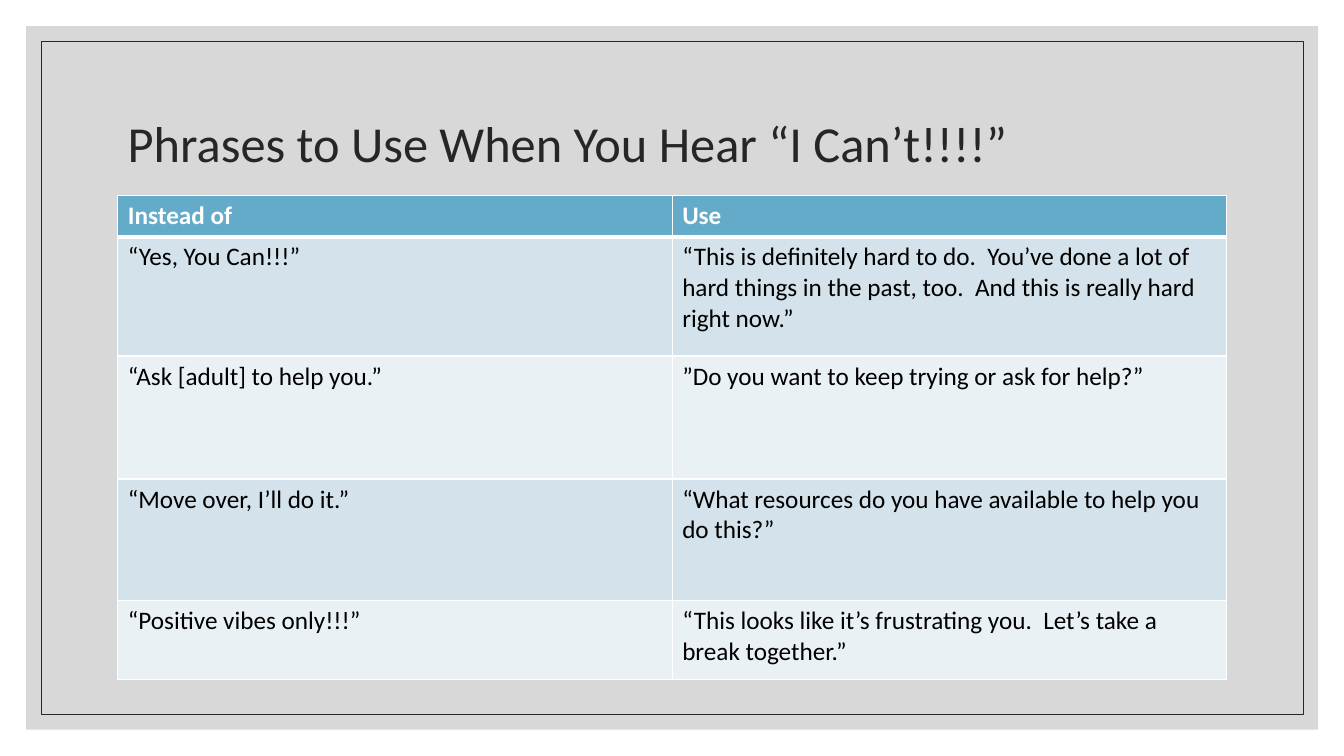
from dataclasses import dataclass

from lxml import etree
from pptx import Presentation
from pptx import util as u
from pptx.dml.color import RGBColor
from pptx.enum import shapes, text
from pptx.oxml import ns


@dataclass(frozen=True)
class Theme:
    font: str = "Calibri"
    big: int = 36
    body: int = 18
    dark: str = "262626"
    black: str = "000000"
    white: str = "FFFFFF"
    panel: str = "BFBFBF"
    head: str = "63ABC9"
    bands: tuple = ("D3E2EB", "EAF1F5")


THEME = Theme()
ROWS = [
    ("Instead of", "Use"),
    ("“Yes, You Can!!!”",
     "“This is definitely hard to do.  You’ve done a lot of hard things "
     "in the past, too.  And this is really hard right now.”"),
    ("“Ask [adult] to help you.”",
     "”Do you want to keep trying or ask for help?”"),
    ("“Move over, I’ll do it.”",
     "“What resources do you have available to help you do this?”"),
    ("“Positive vibes only!!!”",
     "“This looks like it’s frustrating you.  Let’s take a break together.”"),
]
HEIGHTS = (1.04, 3, 3.1, 3.07, 1.98)
WIDTH = 13.97


def color(code):
    return RGBColor.from_string(code)


def child(node, tag, **attrs):
    return etree.SubElement(node, ns.qn(tag), attrs)


def add_run(para, words, size, code, bold=False):
    run = para.add_run()
    run.text = words
    font = run.font
    font.name, font.size, font.bold = THEME.font, u.Pt(size), bold
    font.color.rgb = color(code)


def add_rect(slide, box):
    rect = slide.shapes.add_shape(shapes.MSO_SHAPE.RECTANGLE, *map(u.Cm, box))
    rect.shadow.inherit = False
    return rect


def add_panel(slide, box):
    rect = add_rect(slide, box)
    rect.fill.solid()
    rect.fill.fore_color.rgb = color(THEME.panel)
    rect.line.fill.background()
    tone = rect.fill._xPr.find(".//" + ns.qn("a:srgbClr"))
    child(tone, "a:alpha", val="60000")


def add_frame(slide, box):
    rect = add_rect(slide, box)
    rect.fill.background()
    rect.line.color.rgb = color(THEME.dark)
    rect.line.width = u.Pt(0.5)


def add_title(slide, box, words):
    frame = slide.shapes.add_textbox(*map(u.Cm, box)).text_frame
    frame.word_wrap = True
    frame.vertical_anchor = text.MSO_ANCHOR.MIDDLE
    para = frame.paragraphs[0]
    para.line_spacing = 0.9
    add_run(para, words, THEME.big, THEME.dark)


def set_edges(cell, top, base):
    props = cell._tc.get_or_add_tcPr()
    for side, size in zip("LRTB", (1, 1, top, base)):
        line = child(props, "a:ln" + side, w=str(u.Pt(size)))
        fill = child(line, "a:solidFill")
        child(fill, "a:srgbClr", val=THEME.white)


def fill_cell(cell, words, row):
    is_head = row == 0
    set_edges(cell, 3 if row == 1 else 1, 3 if is_head else 1)
    cell.fill.solid()
    tone = THEME.head if is_head else THEME.bands[(row - 1) % 2]
    cell.fill.fore_color.rgb = color(tone)
    ink = THEME.white if is_head else THEME.black
    add_run(cell.text_frame.paragraphs[0], words, THEME.body, ink, is_head)


def add_grid(slide, left, top):
    box = (left, top, WIDTH * 2, sum(HEIGHTS))
    grid = slide.shapes.add_table(len(ROWS), 2, *map(u.Cm, box)).table
    for col in grid.columns:
        col.width = u.Cm(WIDTH)
    for row, (pair, height) in enumerate(zip(ROWS, HEIGHTS)):
        grid.rows[row].height = u.Cm(height)
        for col, words in enumerate(pair):
            fill_cell(grid.cell(row, col), words, row)


def main():
    deck = Presentation()
    deck.slide_width, deck.slide_height = u.Cm(33.87), u.Cm(19.05)
    slide = deck.slides.add_slide(deck.slide_layouts[6])
    add_panel(slide, (0.66, 0.66, 32.56, 17.73))
    add_frame(slide, (1.04, 1.04, 31.8, 16.97))
    add_title(slide, (2.97, 1.78, 27.94, 3.81),
              "Phrases to Use When You Hear “I Can’t!!!!”")
    add_grid(slide, 2.97, 4.93)
    deck.save("out.pptx")


if __name__ == "__main__":
    main()
